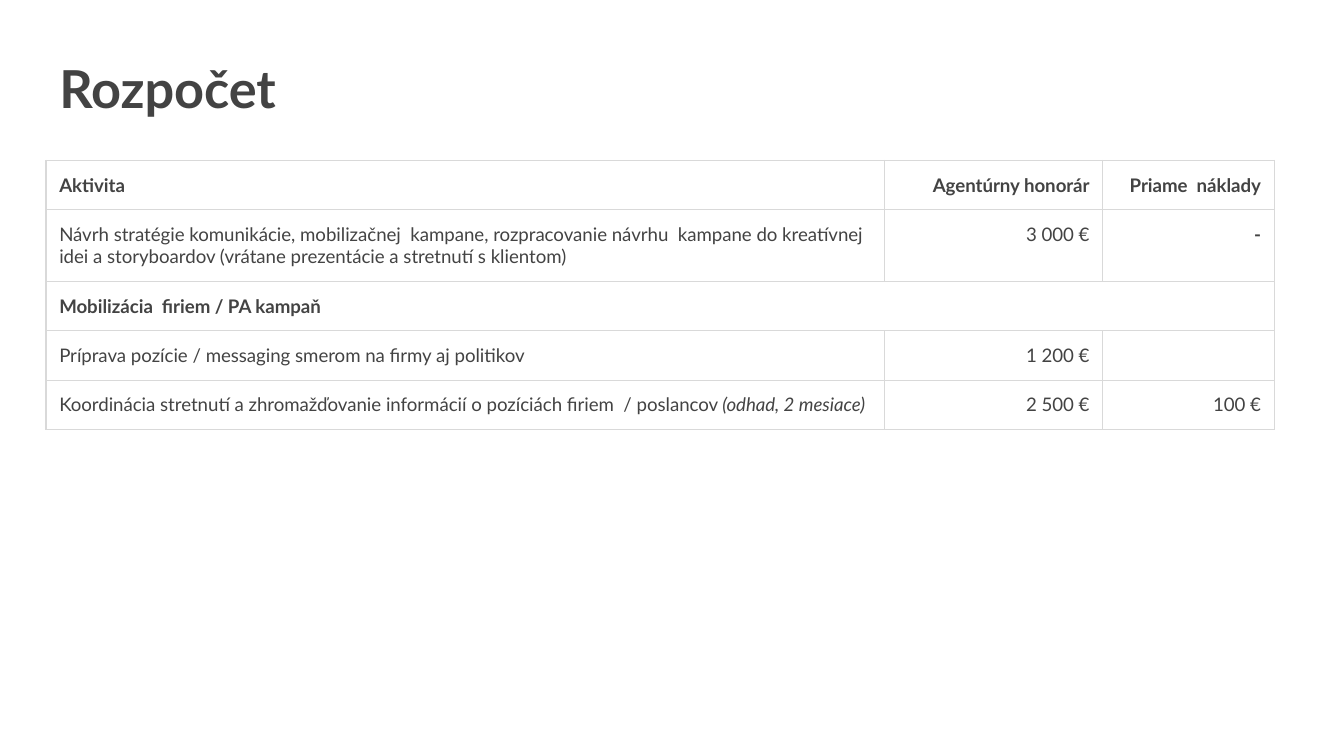
from dataclasses import dataclass

from lxml.etree import SubElement
from pptx import Presentation
from pptx.dml.color import RGBColor
from pptx.enum.text import MSO_ANCHOR, MSO_AUTO_SIZE, PP_ALIGN
from pptx.oxml.ns import qn
from pptx.util import Cm, Pt


@dataclass(frozen=True)
class Theme:
    font: str = "Lato"
    ink: str = "434343"
    rule: str = "D9D9D9"
    rule_width: float = 0.75
    title_size: int = 28
    body_size: int = 10
    inset: float = 0.25


THEME = Theme()
TITLE_ONLY = 5
BOLD = {"bold": True}
PLAIN = {"bold": False}
ITALIC = {"bold": False, "italic": True}

# Each row lists its cells; each cell lists its (text, format) runs.
BUDGET = [
    [[("Aktivita", BOLD)], [("Agentúrny honorár", BOLD)], [("Priame  náklady", BOLD)]],
    [[("Návrh stratégie komunikácie, mobilizačnej  kampane, rozpracovanie návrhu  "
       "kampane do kreatívnej idei a storyboardov (vrátane prezentácie a stretnutí "
       "s klientom)", PLAIN)],
     [("3 000 €", PLAIN)], [("-", BOLD)]],
    [[("Mobilizácia  firiem / PA kampaň", BOLD)]],
    [[("Príprava pozície / messaging smerom na firmy aj politikov", PLAIN)],
     [("1 200 €", PLAIN)], []],
    [[("Koordinácia stretnutí a zhromažďovanie informácií o pozíciách firiem  "
       "/ poslancov ", PLAIN), ("(odhad, 2 mesiace)", ITALIC)],
     [("2 500 €", PLAIN)], [("100 €", PLAIN)]],
]
COLUMN_WIDTHS = [15.84, 4.13, 3.24]
ROW_HEIGHTS = [0.93, 1.36, 0.93, 0.93, 0.93]


def apply_format(target, values):
    for name, value in values.items():
        setattr(target, name, value)


def add_run(paragraph, text, size, style):
    run = paragraph.add_run()
    run.text = text
    apply_format(run.font, {"name": THEME.font, "size": Pt(size), **style})
    run.font.color.rgb = RGBColor.from_string(THEME.ink)


def add_title(slide, text, left, top, width, height):
    title = slide.shapes.title
    apply_format(title, {"left": left, "top": top, "width": width, "height": height})
    inset = Cm(THEME.inset)
    apply_format(title.text_frame, {
        "margin_left": inset, "margin_right": inset,
        "margin_top": inset, "margin_bottom": inset,
        "vertical_anchor": MSO_ANCHOR.TOP,
        "auto_size": MSO_AUTO_SIZE.NONE, "word_wrap": True,
    })
    paragraph = title.text_frame.paragraphs[0]
    paragraph.alignment = PP_ALIGN.LEFT
    add_run(paragraph, text, THEME.title_size, BOLD)


def add_borders(cell):
    properties = cell._tc.get_or_add_tcPr()
    for side in ("a:lnL", "a:lnR", "a:lnT", "a:lnB"):
        line = SubElement(properties, qn(side), w=str(Pt(THEME.rule_width)))
        fill = SubElement(line, qn("a:solidFill"))
        SubElement(fill, qn("a:srgbClr"), val=THEME.rule)


def fill_cell(cell, runs, alignment):
    paragraph = cell.text_frame.paragraphs[0]
    paragraph.alignment = alignment
    for text, style in runs:
        add_run(paragraph, text, THEME.body_size, style)
    if not runs:  # keeps the empty line as low as the written ones
        SubElement(paragraph._p, qn("a:endParaRPr"), sz=str(THEME.body_size * 100))


def add_budget_table(slide, rows, left, top, width, height):
    frame = slide.shapes.add_table(len(rows), len(COLUMN_WIDTHS), left, top, width, height)
    budget = frame.table
    apply_format(budget, {"first_row": False, "horz_banding": False})
    for column, column_width in zip(budget.columns, COLUMN_WIDTHS):
        column.width = Cm(column_width)
    for row, row_height in zip(budget.rows, ROW_HEIGHTS):
        row.height = Cm(row_height)

    inset = Cm(THEME.inset)
    for cell in budget.iter_cells():
        add_borders(cell)
        cell.fill.background()
        apply_format(cell, {
            "margin_left": inset, "margin_right": inset,
            "margin_top": inset, "margin_bottom": inset,
            "vertical_anchor": MSO_ANCHOR.TOP,
        })

    last_column = len(COLUMN_WIDTHS) - 1
    for row_index, cells in enumerate(rows):
        if len(cells) == 1:
            budget.cell(row_index, 0).merge(budget.cell(row_index, last_column))
        for column_index, runs in enumerate(cells):
            alignment = PP_ALIGN.RIGHT if column_index else PP_ALIGN.LEFT
            fill_cell(budget.cell(row_index, column_index), runs, alignment)


def main():
    deck = Presentation()
    deck.slide_width, deck.slide_height = Cm(25.4), Cm(14.28)
    slide = deck.slides.add_slide(deck.slide_layouts[TITLE_ONLY])
    left = Cm(0.87)
    add_title(slide, "Rozpočet", left, Cm(0.82), Cm(23.67), Cm(1.59))
    add_budget_table(slide, BUDGET, left, Cm(3.03),
                     Cm(sum(COLUMN_WIDTHS)), Cm(sum(ROW_HEIGHTS)))
    deck.save("out.pptx")


if __name__ == "__main__":
    main()
